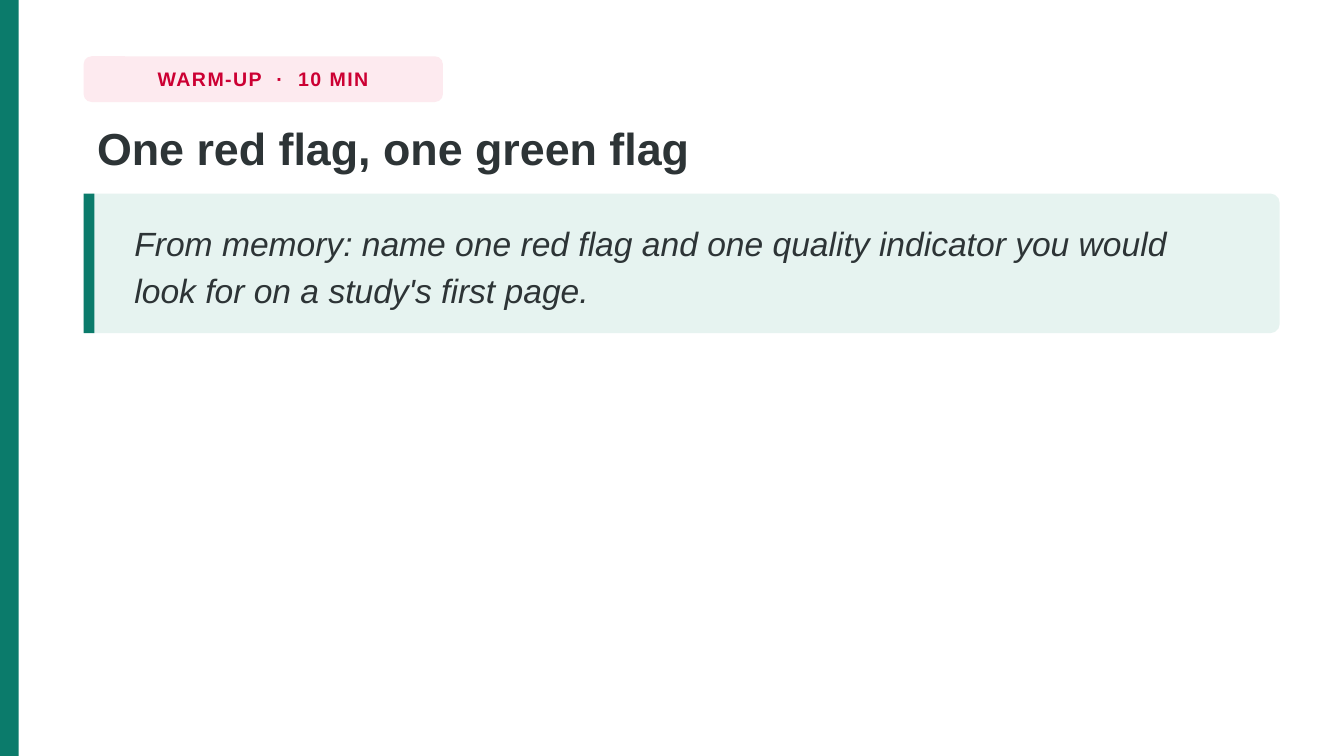
from pptx import Presentation
from pptx.dml.color import RGBColor
from pptx.enum.shapes import MSO_SHAPE
from pptx.enum.text import MSO_ANCHOR, MSO_AUTO_SIZE, PP_ALIGN
from pptx.oxml.ns import qn
from pptx.util import Pt

WIDTH, HEIGHT = 720, 405
LEFT, CONTENT_WIDTH = 44.8, 640.8
CARD_TOP, CARD_HEIGHT = 103.7, 74.8
GREEN, MINT, RED, PINK, INK = "0B7B6B", "E6F3F0", "CC0033", "FDEAEF", "2D3436"


def color(hex_code):
    return RGBColor.from_string(hex_code)


def add_block(slide, left, top, width, height, fill, radius=None):
    """Add a flat rectangle, rounded when a corner radius is given."""
    kind = MSO_SHAPE.RECTANGLE if radius is None else MSO_SHAPE.ROUNDED_RECTANGLE
    block = slide.shapes.add_shape(kind, Pt(left), Pt(top), Pt(width), Pt(height))
    if radius is not None:
        block.adjustments[0] = radius / min(width, height)
    block.fill.solid()
    block.fill.fore_color.rgb = color(fill)
    block.line.fill.background()
    block.shadow.inherit = False
    return block


def write(shape, text, size, ink=INK, bold=False, italic=False, align=PP_ALIGN.LEFT,
          anchor=MSO_ANCHOR.MIDDLE, line_spacing=None, tracking=None, wrap=True):
    """Put one formatted paragraph without a bullet into a shape."""
    frame = shape.text_frame
    frame.text = text
    frame.word_wrap = wrap
    frame.auto_size = MSO_AUTO_SIZE.NONE
    frame.vertical_anchor = anchor
    paragraph = frame.paragraphs[0]
    properties = paragraph._p.get_or_add_pPr()
    properties.set("marL", "0")
    properties.set("indent", "0")
    properties.append(properties.makeelement(qn("a:buNone"), {}))
    paragraph.alignment = align
    paragraph.space_before = Pt(0)
    if line_spacing:
        paragraph.line_spacing = line_spacing
    run = paragraph.runs[0]
    font = run.font
    font.name, font.size = "Arial", Pt(size)
    font.bold, font.italic = bold, italic
    font.color.rgb = color(ink)
    if tracking:
        run._r.get_or_add_rPr().set("spc", str(round(tracking * 100)))


def place(placeholder, left, top, width, height):
    """Position a placeholder and bring it to the front."""
    placeholder.left, placeholder.top = Pt(left), Pt(top)
    placeholder.width, placeholder.height = Pt(width), Pt(height)
    placeholder.element.getparent().append(placeholder.element)


def main():
    deck = Presentation()
    deck.slide_width, deck.slide_height = Pt(WIDTH), Pt(HEIGHT)
    slide = deck.slides.add_slide(deck.slide_layouts[1])
    heading, prompt = slide.placeholders

    # Slide edge
    add_block(slide, 0, 0, 10, HEIGHT, GREEN)

    # Activity tag
    tag = add_block(slide, LEFT, 30.2, 192.5, 24.5, PINK, radius=4.3)
    write(tag, "WARM-UP  ·  10 MIN", 10.5, ink=RED, bold=True,
          align=PP_ALIGN.CENTER, tracking=0.8, wrap=False)

    # Title
    place(heading, LEFT, 60.5, CONTENT_WIDTH, 40.3)
    write(heading, "One red flag, one green flag", 24, bold=True,
          anchor=MSO_ANCHOR.TOP, line_spacing=1.02)

    # Prompt card with accent bar
    add_block(slide, LEFT, CARD_TOP, CONTENT_WIDTH, CARD_HEIGHT, MINT, radius=5)
    add_block(slide, LEFT, CARD_TOP, 5.8, CARD_HEIGHT, GREEN)
    place(prompt, LEFT + 20, CARD_TOP + 3.6, 601.2, CARD_HEIGHT - 7.2)
    write(prompt, "From memory: name one red flag and one quality indicator you would "
          "look for on a study's first page.", 18, italic=True, line_spacing=1.16)

    deck.save("out.pptx")


if __name__ == "__main__":
    main()
